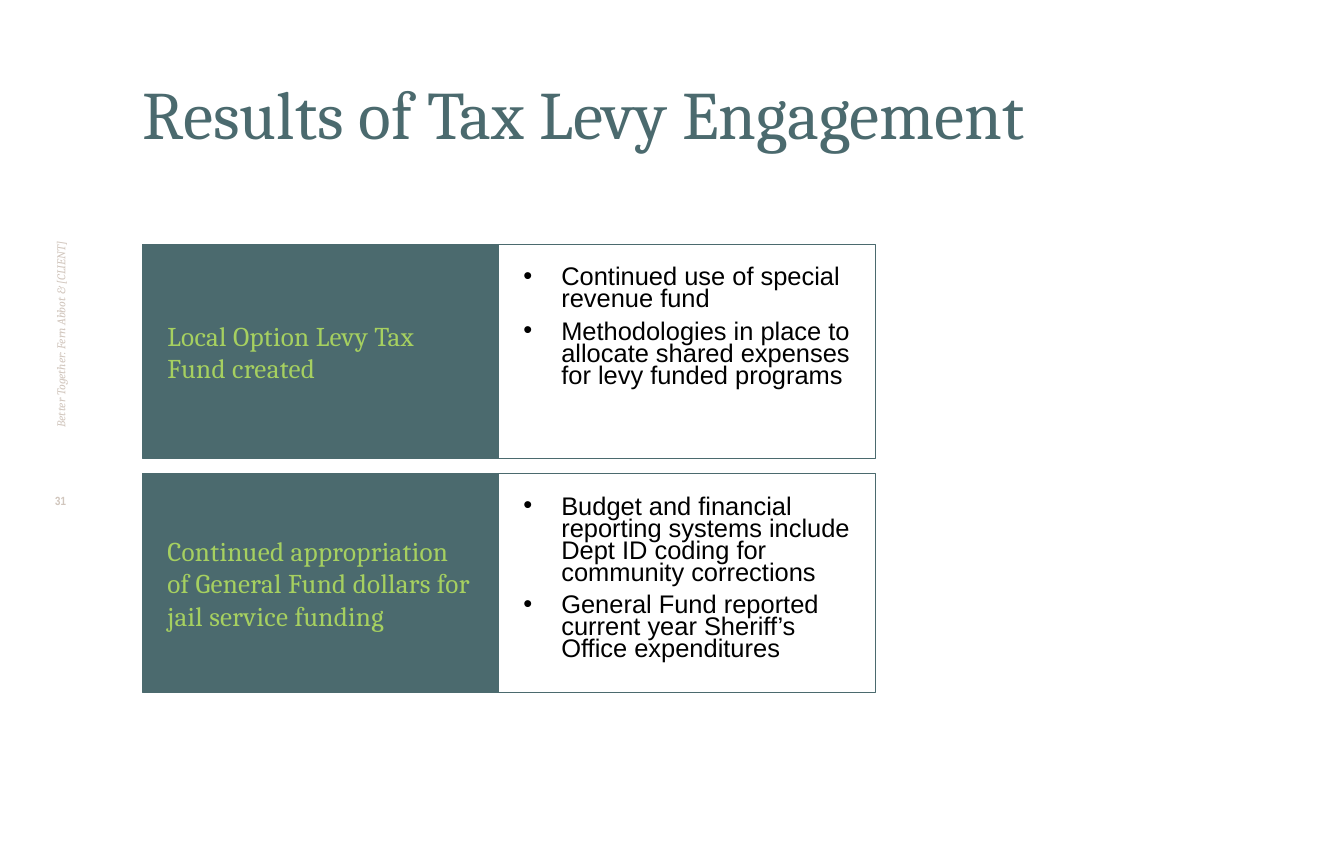
from lxml import etree
from pptx import Presentation
from pptx.dml.color import RGBColor
from pptx.enum import shapes, text
from pptx.oxml.ns import qn
from pptx.util import Cm, Pt

TEAL = RGBColor(0x4B, 0x6A, 0x6E)
LIME = RGBColor(0xA6, 0xD0, 0x60)
SAND = RGBColor(0xD1, 0xC6, 0xBD)
BLACK = RGBColor(0, 0, 0)

LEFT, TOPIC_WIDTH, DETAIL_WIDTH = Cm(2.97), Cm(7.4), Cm(7.83)
PADDING, INDENT = Cm(0.51), Cm(0.79)

RESULTS = [
    (Cm(5.08), Cm(4.46), "Local Option Levy Tax Fund created",
     ["Continued use of special revenue fund",
      "Methodologies in place to allocate shared expenses for levy funded programs"]),
    (Cm(9.85), Cm(4.55),
     "Continued appropriation of General Fund dollars for jail service funding",
     ["Budget and financial reporting systems include Dept ID coding for community corrections",
      "General Fund reported current year Sheriff’s Office expenditures"]),
]


def set_frame(shape, anchor, side=0, top=0):
    frame = shape.text_frame
    frame.word_wrap = True
    frame.vertical_anchor = anchor
    frame.margin_left = frame.margin_right = side
    frame.margin_top, frame.margin_bottom = top, 0
    return frame


def write(paragraph, words, font_name, size, color, align=text.PP_ALIGN.LEFT):
    paragraph.text = words
    paragraph.alignment = align
    font = paragraph.font
    font.name, font.size, font.color.rgb = font_name, Pt(size), color
    return font


prs = Presentation()
prs.slide_width, prs.slide_height = Cm(27.94), Cm(17.78)
slide = prs.slides.add_slide(prs.slide_layouts[6])

footer = slide.shapes.add_textbox(Cm(0.79), Cm(1.27), Cm(0.94), Cm(7.62))
footer_frame = set_frame(footer, text.MSO_ANCHOR.MIDDLE)
footer_frame._txBody.bodyPr.set("vert", "vert270")
write(footer_frame.paragraphs[0], "Better Together: Fern Abbot & [CLIENT]",
      "Cambria", 7, SAND).italic = True

page_number = slide.shapes.add_textbox(Cm(0.79), Cm(10.26), Cm(0.94), Cm(0.97))
write(set_frame(page_number, text.MSO_ANCHOR.TOP).paragraphs[0], "31",
      "Arial Narrow", 7, SAND, text.PP_ALIGN.CENTER).bold = True

title = slide.shapes.add_textbox(LEFT, Cm(1.27), Cm(23.06), Cm(1.91))
write(set_frame(title, text.MSO_ANCHOR.BOTTOM).paragraphs[0],
      "Results of Tax Levy Engagement", "Cambria", 40, TEAL)

for top, height, topic_words, points in RESULTS:
    topic = slide.shapes.add_shape(
        shapes.MSO_SHAPE.RECTANGLE, LEFT, top, TOPIC_WIDTH, height)
    detail = slide.shapes.add_shape(
        shapes.MSO_SHAPE.RECTANGLE, LEFT + TOPIC_WIDTH, top, DETAIL_WIDTH, height)
    for panel in (topic, detail):
        panel.shadow.inherit = False
        panel.line.color.rgb = TEAL
        panel.line.width = Pt(0.75)
    topic.fill.solid()
    topic.fill.fore_color.rgb = TEAL
    detail.fill.background()

    heading = set_frame(topic, text.MSO_ANCHOR.MIDDLE, PADDING).paragraphs[0]
    write(heading, topic_words, "Cambria", 16, LIME)
    heading.runs[0]._r.get_or_add_rPr().set("spc", "20")

    detail_frame = set_frame(detail, text.MSO_ANCHOR.TOP, PADDING, PADDING)
    for index, point in enumerate(points):
        item = detail_frame.add_paragraph() if index else detail_frame.paragraphs[0]
        item.line_spacing = Pt(13)
        item.space_before = Pt(6 if index else 0)
        properties = item._p.get_or_add_pPr()
        properties.set("marL", str(INDENT))
        properties.set("indent", str(-INDENT))
        etree.SubElement(properties, qn("a:buFont")).set("typeface", "Arial")
        etree.SubElement(properties, qn("a:buChar")).set("char", "•")
        write(item, point, "Arial", 15, BLACK)

prs.save("out.pptx")
